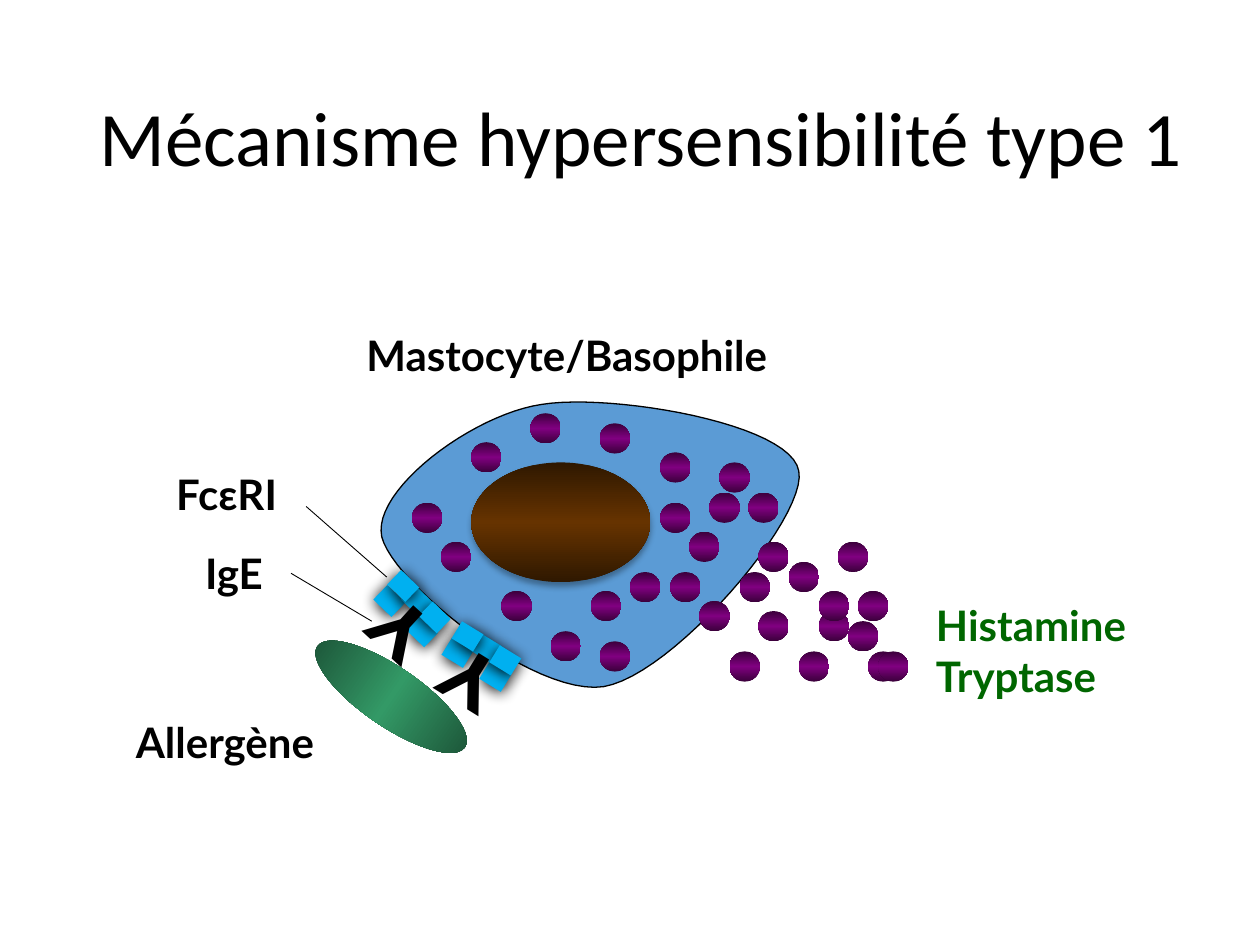
from dataclasses import dataclass

import pptx
import pptx.dml.color
import pptx.enum.shapes
import pptx.enum.text
import pptx.oxml
import pptx.oxml.ns
import pptx.util

PX = 9144
CURVE_STEPS = 24
COLORS = {
    "text": "000000", "mediator": "006600", "cell": "5B9BD5",
    "nucleus": "663300", "nucleus_edge": "2F1800",
    "granule": "800080", "granule_edge": "3B003B",
    "allergen": "339966", "allergen_edge": "18472F",
    "receptor": "00B0F0",
}
FORMATS = {
    "title": {"name": "Calibri", "size": pptx.util.Pt(44), "bold": False},
    "label": {"name": "Lato", "size": pptx.util.Pt(24), "bold": True},
    "antibody": {"name": "Montserrat", "size": pptx.util.Pt(44), "bold": True},
}


@dataclass(frozen=True)
class Box:
    left: int
    top: int
    width: int
    height: int
    rotation: float = 0

    def emu(self) -> tuple[int, ...]:
        return tuple(n * PX for n in (self.left, self.top, self.width, self.height))


@dataclass(frozen=True)
class Label:
    lines: tuple[str, ...]
    box: Box
    style: str = "label"
    color: str = "text"
    wrap: bool = False


@dataclass(frozen=True)
class Shadow:
    alpha: int
    blur: float
    distance: float


@dataclass(frozen=True)
class ReceptorCluster:
    rotation: float
    corners: tuple[tuple[int, int], ...]


@dataclass(frozen=True)
class Pointer:
    start: tuple[int, int]
    end: tuple[int, int]


CELL_START = (430, 321)
CELL_CURVES = (
    ((375, 329), (295, 389), (303, 426)),
    ((312, 463), (424, 553), (479, 545)),
    ((534, 536), (641, 411), (634, 374)),
    ((628, 336), (485, 312), (430, 321)),
)
GRANULES = (
    (437, 501), (469, 469), (500, 454), (398, 469), (547, 422), (587, 454),
    (555, 477), (626, 446), (594, 391), (602, 430), (476, 509), (350, 430),
    (571, 367), (524, 359), (532, 454), (421, 328), (476, 336), (374, 351),
    (563, 391), (327, 399), (524, 399), (602, 485), (665, 430), (650, 485),
    (681, 469), (579, 517), (634, 517), (689, 517), (650, 469), (673, 493),
    (697, 517),
)
CLUSTERS = (
    ReceptorCluster(211.5, ((383, 529), (353, 510), (375, 506), (391, 516), (361, 497))),
    ReceptorCluster(224, ((325, 493), (299, 469), (321, 469), (335, 482), (310, 457))),
)
TITLE = Label(("Mécanisme hypersensibilité type 1",), Box(69, 40, 883, 145), "title", wrap=True)
ANTIBODIES = tuple(
    Label(("Y",), box, "antibody", wrap=True)
    for box in (Box(276, 457, 71, 83, 222.5), Box(332, 498, 71, 83, 211.9))
)
LABELS = (
    Label(("Histamine", "Tryptase"), Box(733, 471, 191, 91), color="mediator"),
    Label(("Mastocyte/Basophile",), Box(281, 257, 374, 50)),
    Label(("FcεRI",), Box(130, 367, 113, 50)),
    Label(("Allergène",), Box(98, 564, 179, 50)),
    Label(("IgE",), Box(153, 430, 78, 50)),
)
POINTERS = (Pointer((307, 458), (243, 402)), Pointer((231, 455), (295, 493)))


def rgb(name: str) -> pptx.dml.color.RGBColor:
    return pptx.dml.color.RGBColor.from_string(COLORS[name])


def xml(tag: str, content: str):
    namespace = pptx.oxml.ns.nsdecls("a")
    return pptx.oxml.parse_xml(f"<a:{tag} {namespace}>{content}</a:{tag}>")


def apply_gradient(shape, name: str) -> None:
    shape.fill.gradient()
    shape.fill.gradient_angle = 270
    stops = ((0, name + "_edge"), (50, name), (100, name + "_edge"))
    content = "".join(
        f'<a:gs pos="{position * 1000}"><a:srgbClr val="{COLORS[color]}"/></a:gs>'
        for position, color in stops
    )
    old = shape._element.spPr.find(".//" + pptx.oxml.ns.qn("a:gsLst"))
    old.getparent().replace(old, xml("gsLst", content))


def apply_shadow(shape, shadow: Shadow) -> None:
    effects = shape._element.spPr.find(pptx.oxml.ns.qn("a:effectLst"))
    content = (
        f'<a:outerShdw blurRad="{pptx.util.Pt(shadow.blur)}" '
        f'dist="{pptx.util.Pt(shadow.distance)}" dir="5400000" rotWithShape="0">'
        f'<a:srgbClr val="000000"><a:alpha val="{shadow.alpha * 1000}"/></a:srgbClr>'
        "</a:outerShdw>"
    )
    effects.getparent().replace(effects, xml("effectLst", content))


def draw_shape(slide, kind, box: Box):
    shape = slide.shapes.add_shape(kind, *box.emu())
    shape.rotation = box.rotation
    shape.shadow.inherit = False
    shape.line.fill.background()
    return shape


def draw_ellipse(slide, box: Box, color: str):
    shape = draw_shape(slide, pptx.enum.shapes.MSO_SHAPE.OVAL, box)
    apply_gradient(shape, color)
    return shape


def draw_receptors(slide, cluster: ReceptorCluster) -> None:
    for left, top in cluster.corners:
        box = Box(left, top, 20, 16, cluster.rotation)
        shape = draw_shape(slide, pptx.enum.shapes.MSO_SHAPE.RECTANGLE, box)
        shape.fill.solid()
        shape.fill.fore_color.rgb = rgb("receptor")
        apply_shadow(shape, Shadow(100, 8.5, 1))


def draw_cell(slide) -> None:
    points, start = [], CELL_START
    for first, second, end in CELL_CURVES:
        for step in range(1, CURVE_STEPS + 1):
            t = step / CURVE_STEPS
            weights = ((1 - t) ** 3, 3 * t * (1 - t) ** 2, 3 * t * t * (1 - t), t ** 3)
            corners = (start, first, second, end)
            points.append(tuple(
                PX * sum(w * corner[axis] for w, corner in zip(weights, corners))
                for axis in (0, 1)
            ))
        start = end
    builder = slide.shapes.build_freeform(*(n * PX for n in CELL_START))
    builder.add_line_segments(points, close=True)
    shape = builder.convert_to_shape()
    shape.shadow.inherit = False
    shape.fill.solid()
    shape.fill.fore_color.rgb = rgb("cell")
    shape.line.color.rgb = rgb("text")
    shape.line.width = pptx.util.Pt(0.75)


def draw_label(slide, label: Label):
    shape = slide.shapes.add_textbox(*label.box.emu())
    shape.rotation = label.box.rotation
    frame = shape.text_frame
    frame.word_wrap = label.wrap
    frame.auto_size = pptx.enum.text.MSO_AUTO_SIZE.SHAPE_TO_FIT_TEXT
    for index, line in enumerate(label.lines):
        paragraph = frame.add_paragraph() if index else frame.paragraphs[0]
        run = paragraph.add_run()
        run.text = line
        run.font.color.rgb = rgb(label.color)
        for attribute, value in FORMATS[label.style].items():
            setattr(run.font, attribute, value)
    return shape


def draw_pointer(slide, pointer: Pointer) -> None:
    ends = (n * PX for n in pointer.start + pointer.end)
    connector = slide.shapes.add_connector(pptx.enum.shapes.MSO_CONNECTOR.STRAIGHT, *ends)
    connector.line.color.rgb = rgb("text")
    connector.line.width = pptx.util.Pt(0.5)
    connector._element.spPr.append(xml("effectLst", ""))


def main() -> None:
    presentation = pptx.Presentation()
    presentation.slide_width, presentation.slide_height = 1000 * PX, 750 * PX
    slide = presentation.slides.add_slide(presentation.slide_layouts[6])
    title = draw_label(slide, TITLE).text_frame
    title.auto_size = pptx.enum.text.MSO_AUTO_SIZE.NONE
    title.vertical_anchor = pptx.enum.text.MSO_ANCHOR.MIDDLE
    title.paragraphs[0].line_spacing = 0.9
    draw_cell(slide)
    apply_shadow(draw_ellipse(slide, Box(374, 367, 142, 95), "nucleus"), Shadow(32, 3.5, 2.2))
    for left, top in GRANULES:
        draw_ellipse(slide, Box(left, top, 24, 24), "granule")
    for cluster in CLUSTERS:
        draw_receptors(slide, cluster)
    for antibody in ANTIBODIES:
        draw_label(slide, antibody)
    draw_ellipse(slide, Box(287, 482, 47, 142, 304.4), "allergen")
    for label in LABELS:
        draw_label(slide, label)
    for pointer in POINTERS:
        draw_pointer(slide, pointer)
    presentation.save("out.pptx")


if __name__ == "__main__":
    main()
